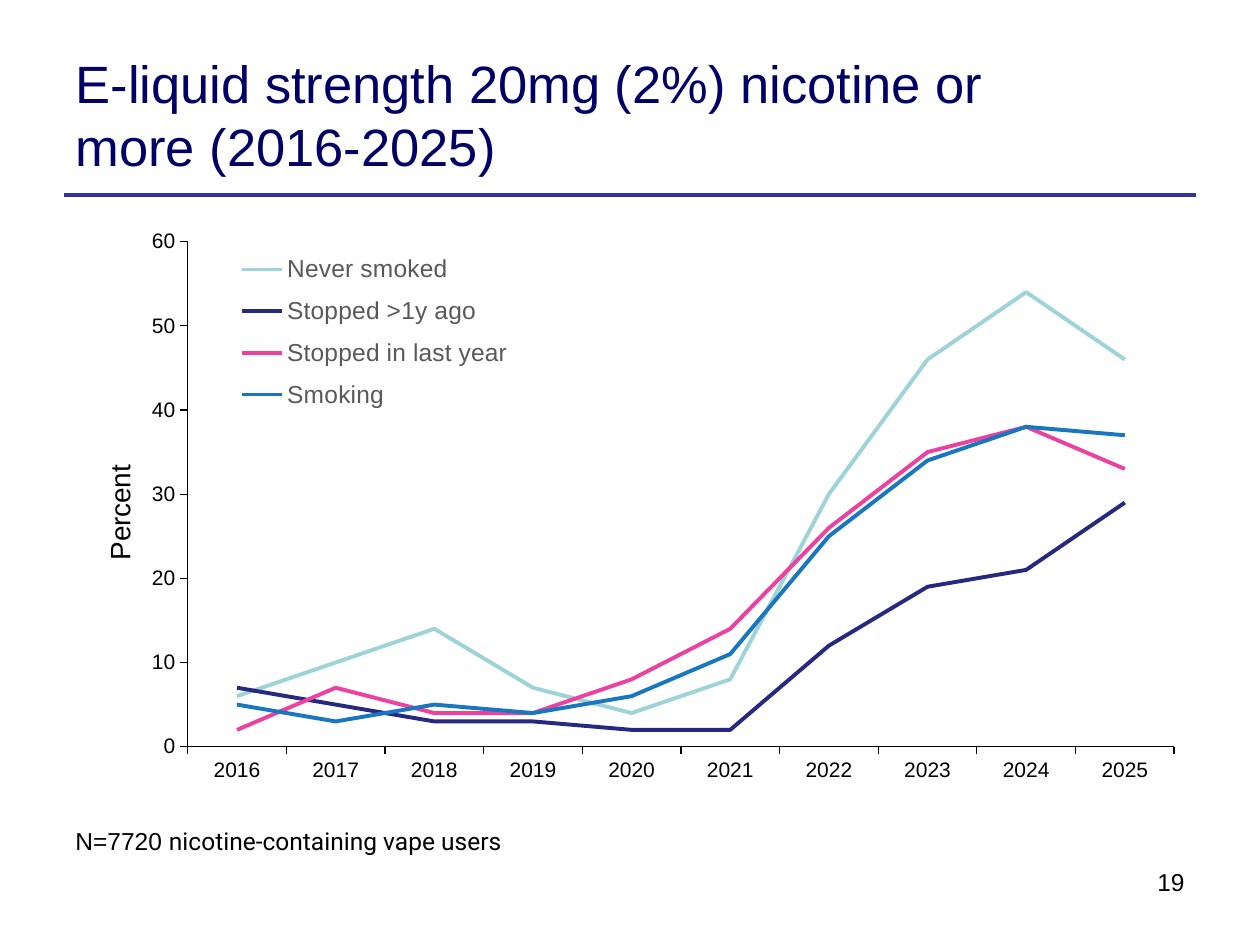
from dataclasses import dataclass

from lxml import etree
from pptx import Presentation
from pptx.chart import data as chart_data
from pptx.dml.color import RGBColor
from pptx.enum import chart as ch, shapes, text
from pptx.oxml import ns
from pptx.util import Inches, Pt


@dataclass(frozen=True)
class Theme:
    font: str = "Arial"
    note_font: str = "Roboto"
    title: str = "000066"
    rule: str = "333399"
    ink: str = "000000"
    legend: str = "595959"
    title_size: int = 30
    axis_title_size: int = 16
    body_size: int = 14
    axis_size: int = 12


THEME = Theme()
YEARS = [str(year) for year in range(2016, 2026)]
SERIES = [
    ("Never smoked", "9ED3D7", (6, 10, 14, 7, 4, 8, 30, 46, 54, 46)),
    ("Stopped >1y ago", "272880", (7, 5, 3, 3, 2, 2, 12, 19, 21, 29)),
    ("Stopped in last year", "EC419F", (2, 7, 4, 4, 8, 14, 26, 35, 38, 33)),
    ("Smoking", "1977C0", (5, 3, 5, 4, 6, 11, 25, 34, 38, 37)),
]


def box(*lengths):
    return [Inches(length) for length in lengths]


def style_font(font, size, color=THEME.ink, name=THEME.font):
    font.name, font.size, font.bold = name, Pt(size), False
    font.color.rgb = RGBColor.from_string(color)


def style_line(line, color, width):
    line.color.rgb = RGBColor.from_string(color)
    line.width = Pt(width)


def add_run(p, content, size, color=THEME.ink, name=THEME.font):
    r = p.add_run()
    r.text = content
    style_font(r.font, size, color, name)


def add_title(s, content):
    title = s.shapes.title
    title.left, title.top, title.width, title.height = box(0.5, 0.28, 7.89, 1.25)
    tf = title.text_frame
    tf.word_wrap = True
    tf.auto_size = text.MSO_AUTO_SIZE.NONE
    tf.vertical_anchor = text.MSO_ANCHOR.MIDDLE
    p = tf.paragraphs[0]
    p.alignment = text.PP_ALIGN.LEFT
    add_run(p, content, THEME.title_size, THEME.title)


def add_rule(s):
    rule = s.shapes.add_connector(
        shapes.MSO_CONNECTOR.STRAIGHT, *box(0.51, 1.55, 9.49, 1.55))
    style_line(rule.line, THEME.rule, 2.25)
    etree.SubElement(rule._element.spPr, ns.qn("a:effectLst"))


def add_text(s, place, runs, align=text.PP_ALIGN.LEFT):
    tf = s.shapes.add_textbox(*box(*place)).text_frame
    tf.word_wrap = True
    p = tf.paragraphs[0]
    p.alignment = align
    for content, name in runs:
        add_run(p, content, THEME.body_size, name=name)


def set_layout(element, index, x, y, w=None, h=None, inner=False):
    """Place a chart part by fractions of the chart area."""
    layout = element.find(ns.qn("c:layout"))
    if layout is None:
        layout = etree.Element(ns.qn("c:layout"))
        element.insert(index, layout)
    manual = etree.SubElement(layout, ns.qn("c:manualLayout"))
    values = {"layoutTarget": "inner" if inner else None,
              "xMode": "edge", "yMode": "edge", "x": x, "y": y, "w": w, "h": h}
    for tag, value in values.items():
        if value is not None:
            etree.SubElement(manual, ns.qn(f"c:{tag}")).set("val", str(value))


def style_axis(axis):
    axis.has_major_gridlines = False
    axis.major_tick_mark = ch.XL_TICK_MARK.OUTSIDE
    axis.minor_tick_mark = ch.XL_TICK_MARK.NONE
    style_font(axis.tick_labels.font, THEME.axis_size)
    style_line(axis.format.line, THEME.ink, 0.75)


def add_value_title(axis, content):
    title = axis.axis_title
    add_run(title.text_frame.paragraphs[0], content, THEME.axis_title_size)
    set_layout(title._element, 1, 0.03, 0.39)


def add_legend(chart):
    chart.has_legend = True
    legend = chart.legend
    legend.position = ch.XL_LEGEND_POSITION.BOTTOM
    legend.include_in_layout = False
    style_font(legend.font, THEME.body_size, THEME.legend)
    set_layout(legend._element, 1, 0.14, 0.04, 0.27, 0.29)


def add_line_chart(s):
    data = chart_data.CategoryChartData(number_format="0")
    data.categories = YEARS
    for name, _, values in SERIES:
        data.add_series(name, values)
    chart = s.shapes.add_chart(
        ch.XL_CHART_TYPE.LINE, *box(0.5, 1.72, 9, 4.95), data).chart
    chart.has_title = False
    style_font(chart.font, 10)

    plot = chart.plots[0]
    plot.vary_by_categories = False
    for series, (_, color, _) in zip(plot.series, SERIES):
        series.smooth = False
        series.marker.style = ch.XL_MARKER_STYLE.NONE
        style_line(series.format.line, color, 2.25)

    for axis in (chart.category_axis, chart.value_axis):
        style_axis(axis)
    values = chart.value_axis
    values.minimum_scale, values.maximum_scale, values.major_unit = 0, 60, 10
    add_value_title(values, "Percent")
    add_legend(chart)
    plot_area = chart._chartSpace.chart.plotArea
    set_layout(plot_area, 0, 0.11, 0.04, 0.87, 0.81, inner=True)


def main():
    prs = Presentation()
    prs.slide_width, prs.slide_height = box(10, 7.5)
    s = prs.slides.add_slide(prs.slide_layouts[5])
    add_rule(s)
    add_title(s, "E-liquid strength 20mg (2%) nicotine or more (2016-2025)")
    add_line_chart(s)
    add_text(s, (6.73, 6.83, 2.77, 0.52), [("19", THEME.font)],
             text.PP_ALIGN.RIGHT)
    add_text(s, (0.5, 6.51, 8.51, 0.34),
             [("N=7720 ", THEME.font),
              ("nicotine-containing vape users", THEME.note_font)])
    prs.save("out.pptx")


if __name__ == "__main__":
    main()
